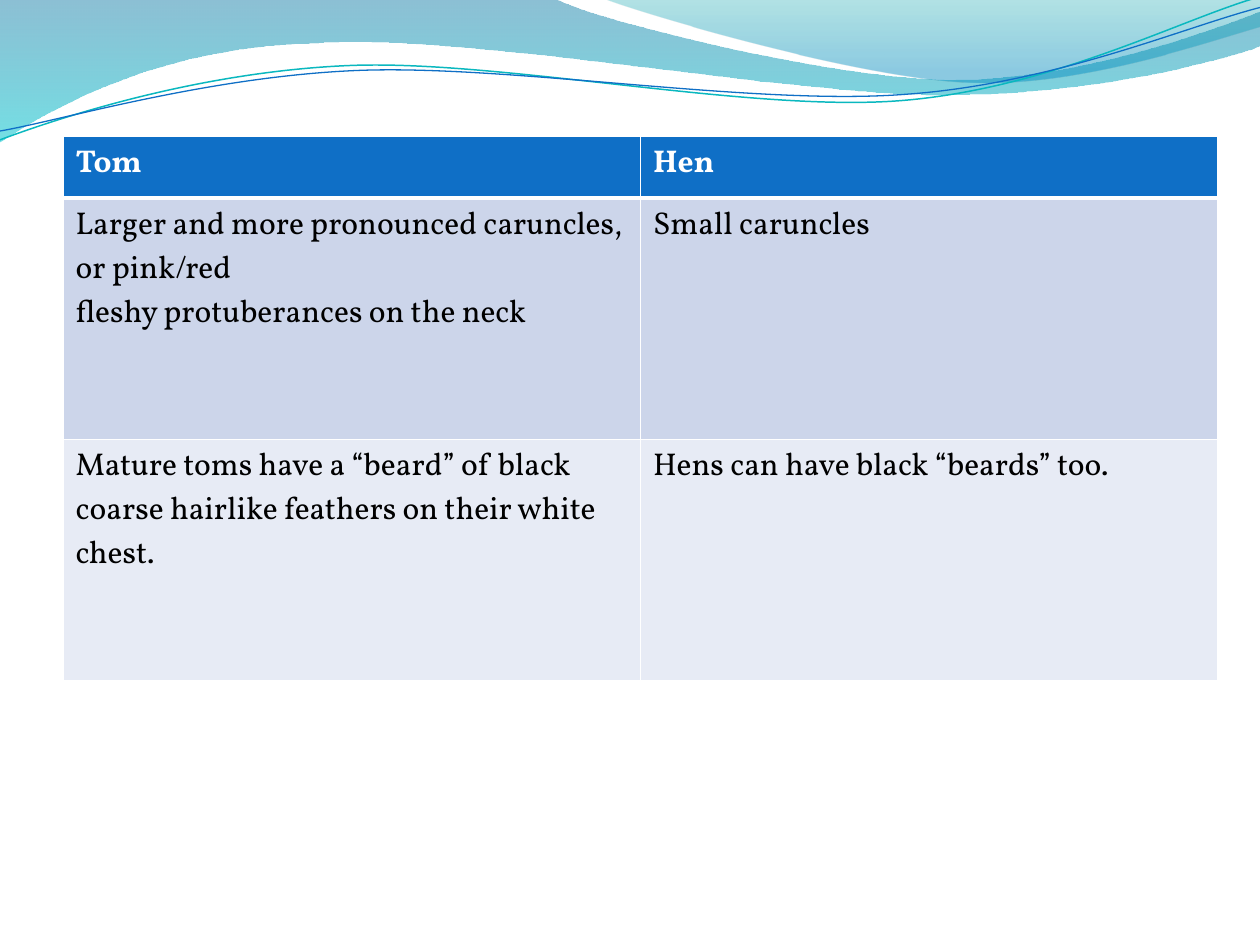
from math import cos, radians, sin

from lxml.etree import SubElement
from pptx import Presentation
from pptx.dml.color import RGBColor as RGB
from pptx.oxml.ns import qn
from pptx.util import Cm, Pt

FONT = "Vollkorn"
WHITE = RGB(0xFF, 0xFF, 0xFF)
BLACK = RGB(0x00, 0x00, 0x00)
BLUE = RGB(0x0F, 0x6F, 0xC6)
TEAL = RGB(0x0A, 0xB8, 0xBF)
BAND_DARK = RGB(0xCC, 0xD5, 0xEA)
BAND_LIGHT = RGB(0xE7, 0xEB, 0xF5)
WAVE_TOP = RGB(0x00, 0x74, 0xA1)
WAVE_BOTTOM = RGB(0x00, 0xC6, 0xCF)
CREST_TOP = RGB(0x00, 0xA1, 0xA9)
CREST_BOTTOM = RGB(0x00, 0x8B, 0xBF)

UNIT = Cm(2.54)  # one unit of the outlines below
TILT = 357.3     # rotation of the two thin curves

# Outlines: a start point, then lines (x, y) or cubic curves (6 numbers)
WAVE = [(0, 0), (4.4, -0.01), (4.76, 0.17, 6.64, 0.63, 7.58, 0.63),
        (8.53, 0.63, 9.58, 0.26, 10, 0.09), (10.01, 0.36),
        (9.83, 0.44, 8.7, 0.76, 7.46, 0.75),
        (6.22, 0.75, 3.82, 0.28, 2.57, 0.34),
        (1.29, 0.36, 0.46, 0.83, -0.01, 1.13)]
CREST = [(4.79, -0.01), (5.09, 0.11, 6.82, 0.62, 7.69, 0.65),
         (8.56, 0.69, 9.61, 0.32, 10, 0.21), (10, 0)]
TEAL_CURVE = [(0, 1.11), (0.48, 0.93, 1.58, 0.57, 2.77, 0.52),
              (3.95, 0.47, 5.93, 0.89, 7.13, 0.8),
              (8.33, 0.71, 9.38, 0.15, 9.98, -0.02)]
BLUE_CURVE = [(0, 1.04), (0.47, 0.96, 1.64, 0.61, 2.83, 0.56),
              (4.03, 0.51, 5.97, 0.84, 7.17, 0.75),
              (8.36, 0.67, 9.41, 0.21, 10, 0.06)]

ROWS = [
    ("Tom", "Hen"),
    ("Larger and more pronounced caruncles, or pink/red\n"
     "fleshy protuberances on the neck", "Small caruncles"),
    ("Mature toms have a “beard” of black coarse hairlike feathers "
     "on their white chest.", "Hens can have black “beards” too."),
]
ROW_FILLS = [BLUE, BAND_DARK, BAND_LIGHT]
ROW_HEIGHTS = [Cm(1.24), Cm(4.87), Cm(4.87)]


def add_outline(slide, outline, close):
    """Build all points as lines, then join each curve's three into one."""
    pts = [(seg[i] * UNIT, seg[i + 1] * UNIT)
           for seg in outline for i in range(0, len(seg), 2)]
    fb = slide.shapes.build_freeform(*pts[0])
    fb.add_line_segments(pts[1:], close=close)
    sp = fb.convert_to_shape()
    sp.shadow.inherit = False
    lines = iter(list(sp._element.iter(qn("a:lnTo"))))
    for seg in outline[1:]:
        first = next(lines)
        if len(seg) == 6:
            first.tag = qn("a:cubicBezTo")
            for _ in range(2):
                line = next(lines)
                first.append(line[0])
                line.getparent().remove(line)
    return sp


def add_wave(slide, outline, stops):
    """Closed shape with a see-through gradient running downwards."""
    sp = add_outline(slide, outline, True)
    sp.line.fill.background()
    sp.fill.gradient()
    sp.fill.gradient_angle = 270
    for stop, (pos, color, _) in zip(sp.fill.gradient_stops, stops):
        stop.position = pos
        stop.color.rgb = color
    for clr, (_, _, opacity) in zip(sp._element.spPr.iter(qn("a:srgbClr")), stops):
        SubElement(clr, qn("a:alpha"), val=str(opacity * 1000))


def level(outline, center):
    """Turn an outline back about its center, so that TILT restores it."""
    cx, cy = center
    c, s = cos(radians(-TILT)), sin(radians(-TILT))
    turned = []
    for seg in outline:
        new = []
        for x, y in zip(seg[::2], seg[1::2]):
            dx, dy = x - cx, y - cy
            new += [cx + dx * c - dy * s, cy + dx * s + dy * c]
        turned.append(new)
    return turned


def add_curve(slide, outline, center, color, width):
    sp = add_outline(slide, level(outline, center), False)
    sp.rotation = TILT
    sp.fill.background()
    sp.line.color.rgb = color
    sp.line.width = Pt(width)


def set_borders(cell, **widths):
    tcPr = cell._tc.get_or_add_tcPr()
    for side in "LRTB":
        width = Pt(widths.get(side, 1))
        ln = SubElement(tcPr, qn("a:ln" + side), w=str(width))
        fill = SubElement(ln, qn("a:solidFill"))
        SubElement(fill, qn("a:srgbClr"), val=str(WHITE))


def fill_cell(cell, text, color, header):
    cell.fill.solid()
    cell.fill.fore_color.rgb = color
    p = cell.text_frame.paragraphs[0]
    for i, line in enumerate(text.split("\n")):
        if i:
            p.add_line_break()
        r = p.add_run()
        r.text = line
        r.font.name = FONT
        r.font.size = Pt(18)
        r.font.bold = header
        r.font.color.rgb = WHITE if header else BLACK


def add_comparison(slide):
    table = slide.shapes.add_table(len(ROWS), 2, Cm(1.27), Cm(2.75),
                                   Cm(23.28), sum(ROW_HEIGHTS)).table
    for col in table.columns:
        col.width = Cm(11.64)
    for i, texts in enumerate(ROWS):
        table.rows[i].height = ROW_HEIGHTS[i]
        # Heavier rule between the header and the body
        rule = {0: {"B": 3}, 1: {"T": 3}}.get(i, {})
        for j, text in enumerate(texts):
            cell = table.cell(i, j)
            set_borders(cell, **rule)
            fill_cell(cell, text, ROW_FILLS[i], i == 0)


def main():
    prs = Presentation()
    prs.slide_width, prs.slide_height = Cm(25.4), Cm(19.05)
    slide = prs.slides.add_slide(prs.slide_layouts[6])

    # Wave decoration along the top
    add_wave(slide, WAVE, [(0, WAVE_TOP, 45), (1, WAVE_BOTTOM, 55)])
    add_wave(slide, CREST, [(0, CREST_TOP, 30), (0.8, CREST_BOTTOM, 45)])
    add_curve(slide, TEAL_CURVE, (4.99, 0.58), TEAL, 0.85)
    add_curve(slide, BLUE_CURVE, (5, 0.59), BLUE, 0.75)

    # Tom and hen table
    add_comparison(slide)
    prs.save("out.pptx")


if __name__ == "__main__":
    main()
